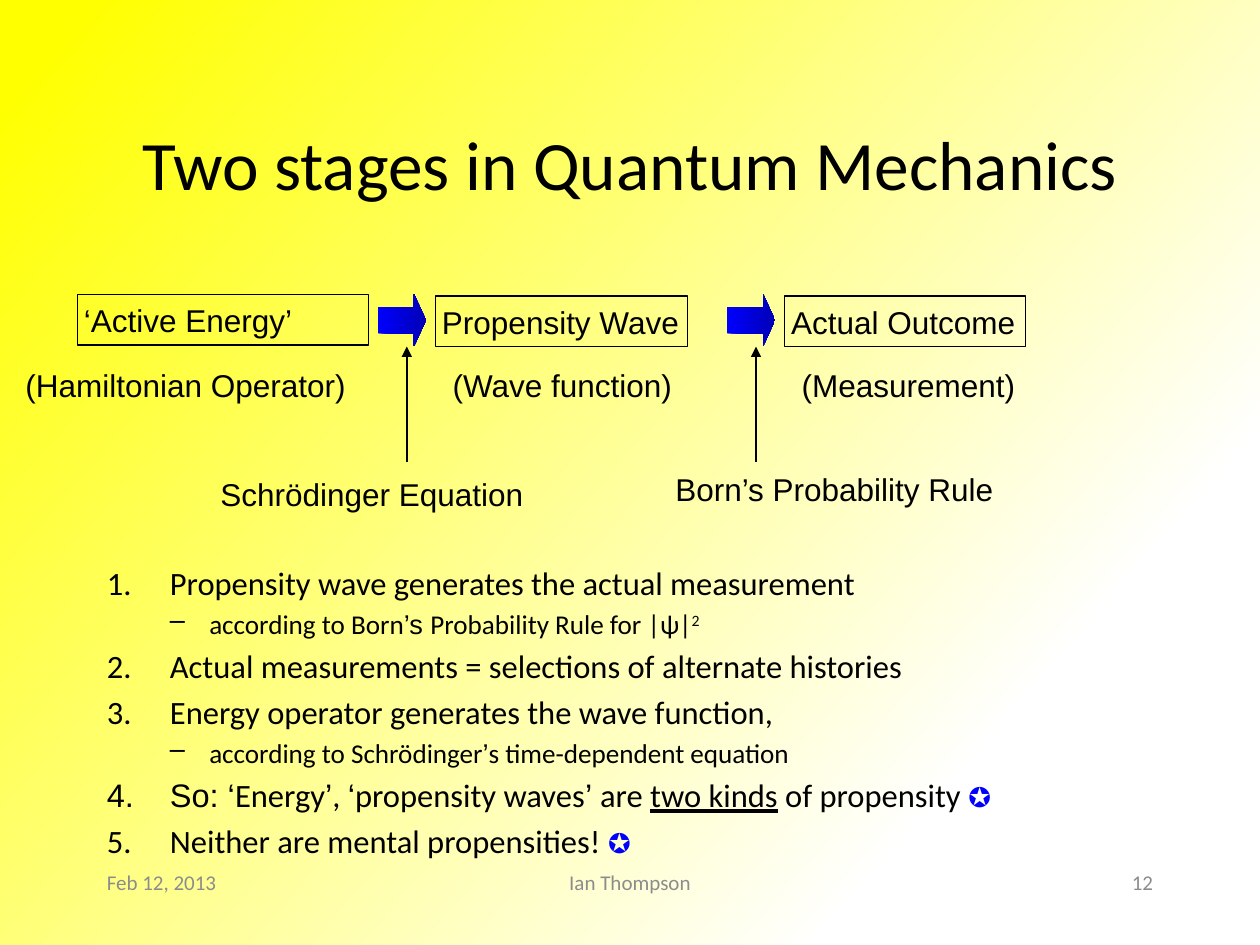
from lxml import etree
from pptx import Presentation
from pptx import util as u
from pptx.dml.color import RGBColor
from pptx.enum import shapes, text
from pptx.oxml import ns

Pt = u.Pt
COLORS = {"text": "000000", "footer": "8C8C8C", "star": "0000FF",
          "arrow_start": "0000FF", "arrow_end": "0000B6",
          "yellow": "FFFF00", "white": "FFFFFF"}
HEAD, BODY = "Calibri", "Arial"
LEFT, CENTER, RIGHT = text.PP_ALIGN.LEFT, text.PP_ALIGN.CENTER, text.PP_ALIGN.RIGHT
MIDDLE, TOP = text.MSO_ANCHOR.MIDDLE, text.MSO_ANCHOR.TOP

# Numbered list: (level, runs); a run is (text, font, style)
STAR = ("✪", BODY, "star")
POINTS = [
    (0, [("Propensity wave generates the actual measurement", HEAD, "")]),
    (1, [("according to Born", HEAD, ""), ("’s ", BODY, ""),
         ("Probability Rule for |ψ|", HEAD, ""), ("2", HEAD, "super")]),
    (0, [("Actual measurements = selections of alternate histories", HEAD, "")]),
    (0, [("Energy operator generates the wave function,", HEAD, "")]),
    (1, [("according to Schrödinger", HEAD, ""), ("’", BODY, ""),
         ("s time-dependent equation", HEAD, "")]),
    (0, [("So: ‘", BODY, ""), ("Energy", HEAD, ""), ("’", BODY, ""),
         (", ", HEAD, ""), ("‘", BODY, ""), ("propensity waves", HEAD, ""),
         ("’ ", BODY, ""), ("are ", HEAD, ""), ("two kinds", HEAD, "underline"),
         (" of propensity ", HEAD, ""), STAR]),
    (0, [("Neither are mental propensities! ", HEAD, ""), STAR]),
]
# Per level: size, left margin, hanging indent, bullet tag and its attributes
LEVELS = [(18.6, 36, 36, "a:buAutoNum", {"type": "arabicPeriod"}),
          (15.5, 58.5, 22.5, "a:buChar", {"char": "–"})]


def rgb(name):
    return RGBColor.from_string(COLORS[name])


def fill_gradient(fill, angle, *stops):
    fill.gradient()
    fill.gradient_angle = angle
    for stop, (position, color) in zip(fill.gradient_stops, stops):
        stop.position = position
        stop.color.rgb = rgb(color)


def add_run(paragraph, words, size, font, color="text"):
    run = paragraph.add_run()
    run.text = words
    run.font.size = Pt(size)
    run.font.name = font
    run.font.color.rgb = rgb(color)
    return run


def add_text(slide, box, words, size, font, color="text", align=LEFT):
    frame = slide.shapes.add_textbox(*map(Pt, box)).text_frame
    frame.word_wrap = True
    frame.vertical_anchor = MIDDLE
    paragraph = frame.paragraphs[0]
    paragraph.alignment = align
    add_run(paragraph, words, size, font, color)
    return frame


def fit_label(frame, wrap):
    frame.margin_left = frame.margin_right = Pt(3.6)
    frame.margin_top = frame.margin_bottom = Pt(3.6)
    frame.word_wrap = wrap
    frame.auto_size = text.MSO_AUTO_SIZE.SHAPE_TO_FIT_TEXT


def add_label(slide, left, top, width, words, wrap=False):
    frame = add_text(slide, (left, top, width, 29), words, 18, BODY)
    fit_label(frame, wrap)


def add_stage(slide, left, top, width, words, wrap=False):
    stage = slide.shapes.add_shape(
        shapes.MSO_SHAPE.RECTANGLE, Pt(left), Pt(top), Pt(width), Pt(29))
    stage.shadow.inherit = False
    stage.fill.background()
    stage.line.color.rgb = rgb("text")
    stage.line.width = Pt(0.75)
    frame = stage.text_frame
    frame.vertical_anchor = MIDDLE
    fit_label(frame, wrap)
    frame.paragraphs[0].alignment = LEFT
    add_run(frame.paragraphs[0], words, 18, BODY)


def add_step_arrow(slide, left):
    arrow = slide.shapes.add_shape(
        shapes.MSO_SHAPE.RIGHT_ARROW, Pt(left), Pt(168), Pt(27.4), Pt(30))
    arrow.shadow.inherit = False
    arrow.adjustments[0], arrow.adjustments[1] = 0.5, 0.25
    arrow.line.fill.background()
    fill_gradient(arrow.fill, 0, (0, "arrow_start"), (1, "arrow_end"))


def add_pointer(slide, x):
    pointer = slide.shapes.add_connector(
        shapes.MSO_CONNECTOR.STRAIGHT, Pt(x), Pt(264), Pt(x), Pt(198))
    pointer.line.color.rgb = rgb("text")
    pointer.line.width = Pt(0.75)
    etree.SubElement(pointer.line._get_or_add_ln(), ns.qn("a:tailEnd"), type="triangle")
    etree.SubElement(pointer._element.spPr, ns.qn("a:effectLst"))


def add_point(paragraph, level, runs):
    size, margin, hanging, bullet, attributes = LEVELS[level]
    paragraph.level = level
    paragraph.space_before = Pt(0.2 * size)
    properties = paragraph._p.get_or_add_pPr()
    properties.set("marL", str(Pt(margin)))
    properties.set("indent", str(-Pt(hanging)))
    etree.SubElement(properties, ns.qn(bullet), attributes)
    for words, font, style in runs:
        is_star = style == "star"
        run = add_run(paragraph, words, 15.5 if is_star else size, font,
                      "star" if is_star else "text")
        if style == "underline":
            run.font.underline = True
        elif style == "super":
            run.font._element.set("baseline", "30000")


def add_points(slide):
    frame = slide.shapes.add_textbox(Pt(54), Pt(318), Pt(643.5), Pt(162)).text_frame
    frame.word_wrap = True
    frame.vertical_anchor = TOP
    for index, (level, runs) in enumerate(POINTS):
        paragraph = frame.add_paragraph() if index else frame.paragraphs[0]
        add_point(paragraph, level, runs)


def main():
    deck = Presentation()
    deck.slide_width, deck.slide_height = Pt(720), Pt(540)
    slide = deck.slides.add_slide(deck.slide_layouts[6])
    fill_gradient(slide.background.fill, 319, (0.04, "yellow"), (0.79, "white"))

    # Title and numbered points
    add_text(slide, (54, 48, 612, 90), "Two stages in Quantum Mechanics",
             39.6, HEAD, align=CENTER)
    add_points(slide)

    # Stages, left to right
    add_stage(slide, 44.4, 168.2, 166.2, "‘Active Energy’", wrap=True)
    add_stage(slide, 249, 169.2, 144, "Propensity Wave")
    add_stage(slide, 448.5, 169.2, 137.7, "Actual Outcome")

    # What each stage is in the theory
    add_label(slide, 11, 205.2, 192.2, "(Hamiltonian Operator)")
    add_label(slide, 255, 205.2, 144.7, "(Wave function)", wrap=True)
    add_label(slide, 454.5, 205.2, 130.3, "(Measurement)")

    # Steps between the stages, and the laws behind them
    for arrow_left in (216, 415.5):
        add_step_arrow(slide, arrow_left)
        add_pointer(slide, arrow_left + 16.5)
    add_label(slide, 122.4, 267.5, 182.2, "Schrödinger Equation")
    add_label(slide, 382.3, 265, 190.8, "Born’s Probability Rule")

    # Footer
    for left, width, words, align in ((54, 150, "Feb 12, 2013", LEFT),
                                      (246, 228, "Ian Thompson", CENTER),
                                      (516, 150, "12", RIGHT)):
        add_text(slide, (left, 486, width, 36), words, 12, HEAD, "footer", align)

    deck.save("out.pptx")


if __name__ == "__main__":
    main()
